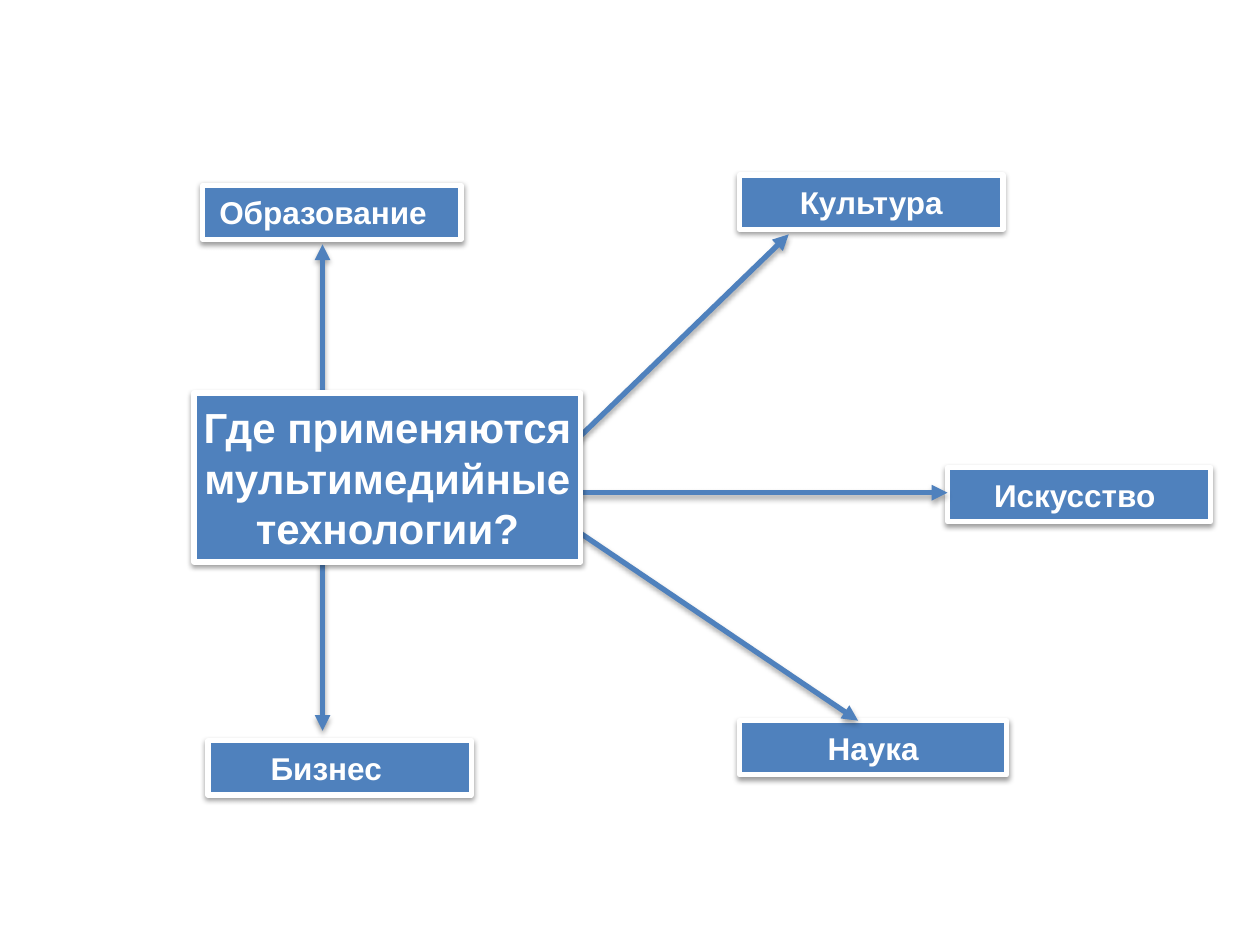
from dataclasses import dataclass

from lxml import etree
from pptx import Presentation
from pptx.dml.color import RGBColor
from pptx.enum import shapes, text
from pptx.oxml import ns
from pptx.util import Inches, Pt

BLUE = RGBColor(0x4F, 0x81, 0xBD)
WHITE = RGBColor(0xFF, 0xFF, 0xFF)
INSET = 0.1


@dataclass(frozen=True)
class Box:
    label: str
    left: float
    top: float
    width: float
    height: float = 0.43
    size: int = 18
    right_inset: float = INSET  # a wider inset moves the label left


@dataclass(frozen=True)
class Arrow:
    start: tuple[float, float]
    end: tuple[float, float]


FIELDS = [
    Box("Образование", 1.61, 1.47, 2.05, right_inset=INSET + 0.14),
    Box("Культура", 5.87, 1.39, 2.09),
    Box("Искусство", 7.52, 3.71, 2.09, right_inset=INSET + 0.07),
    Box("Наука", 5.87, 5.72, 2.12),
    Box("Бизнес", 1.65, 5.88, 2.09, right_inset=INSET + 0.21),
]
ARROWS = [
    Arrow((2.56, 3.2), (2.56, 1.94)),
    Arrow((4.06, 3.99), (6.26, 1.86)),
    Arrow((4.06, 3.91), (7.52, 3.91)),
    Arrow((4.13, 3.91), (6.81, 5.72)),
    Arrow((2.56, 4.46), (2.56, 5.8)),
]
QUESTION = Box("Где применяются\nмультимедийные\nтехнологии?",
               1.54, 3.12, 3.07, 1.34, size=24)


def add_shadow(properties, distance: float, opacity: int) -> None:
    """Put a soft shadow straight below a box or an arrow."""
    effects = properties.find(ns.qn("a:effectLst"))
    if effects is None:
        effects = etree.SubElement(properties, ns.qn("a:effectLst"))
    shadow = etree.SubElement(
        effects, ns.qn("a:outerShdw"), blurRad=str(Pt(3.1)),
        dist=str(Pt(distance)), dir="5400000", rotWithShape="0")
    colour = etree.SubElement(shadow, ns.qn("a:srgbClr"), val="000000")
    etree.SubElement(colour, ns.qn("a:alpha"), val=str(opacity * 1000))


def draw_box(slide, box: Box) -> None:
    panel = slide.shapes.add_shape(
        shapes.MSO_SHAPE.RECTANGLE,
        *map(Inches, (box.left, box.top, box.width, box.height)))
    panel.fill.solid()
    panel.fill.fore_color.rgb = BLUE
    panel.line.color.rgb = WHITE
    panel.line.width = Pt(3)
    panel.shadow.inherit = False
    add_shadow(panel._element.spPr, 1.6, 38)

    frame = panel.text_frame
    frame_format = {
        "text": box.label,
        "word_wrap": False,
        "vertical_anchor": text.MSO_ANCHOR.MIDDLE,
        "margin_left": Inches(INSET),
        "margin_right": Inches(box.right_inset),
    }
    for name, value in frame_format.items():
        setattr(frame, name, value)
    font_format = {"name": "Arial", "size": Pt(box.size), "bold": True}
    for line in frame.paragraphs:
        line.alignment = text.PP_ALIGN.CENTER
        for name, value in font_format.items():
            setattr(line.font, name, value)
        line.font.color.rgb = WHITE


def draw_arrow(slide, arrow: Arrow) -> None:
    link = slide.shapes.add_connector(
        shapes.MSO_CONNECTOR.STRAIGHT,
        *map(Inches, (*arrow.start, *arrow.end)))
    link.line.color.rgb = BLUE
    link.line.width = Pt(3)
    etree.SubElement(link.line._get_or_add_ln(), ns.qn("a:tailEnd"),
                     type="triangle")
    add_shadow(link._element.spPr, 1.8, 35)


def main() -> None:
    deck = Presentation()
    deck.slide_width, deck.slide_height = Inches(10), Inches(7.5)
    slide = deck.slides.add_slide(deck.slide_layouts[6])

    # Fields of use around the question
    for field in FIELDS:
        draw_box(slide, field)
    for arrow in ARROWS:
        draw_arrow(slide, arrow)

    # The question covers the arrow starts
    draw_box(slide, QUESTION)
    deck.save("out.pptx")


if __name__ == "__main__":
    main()
